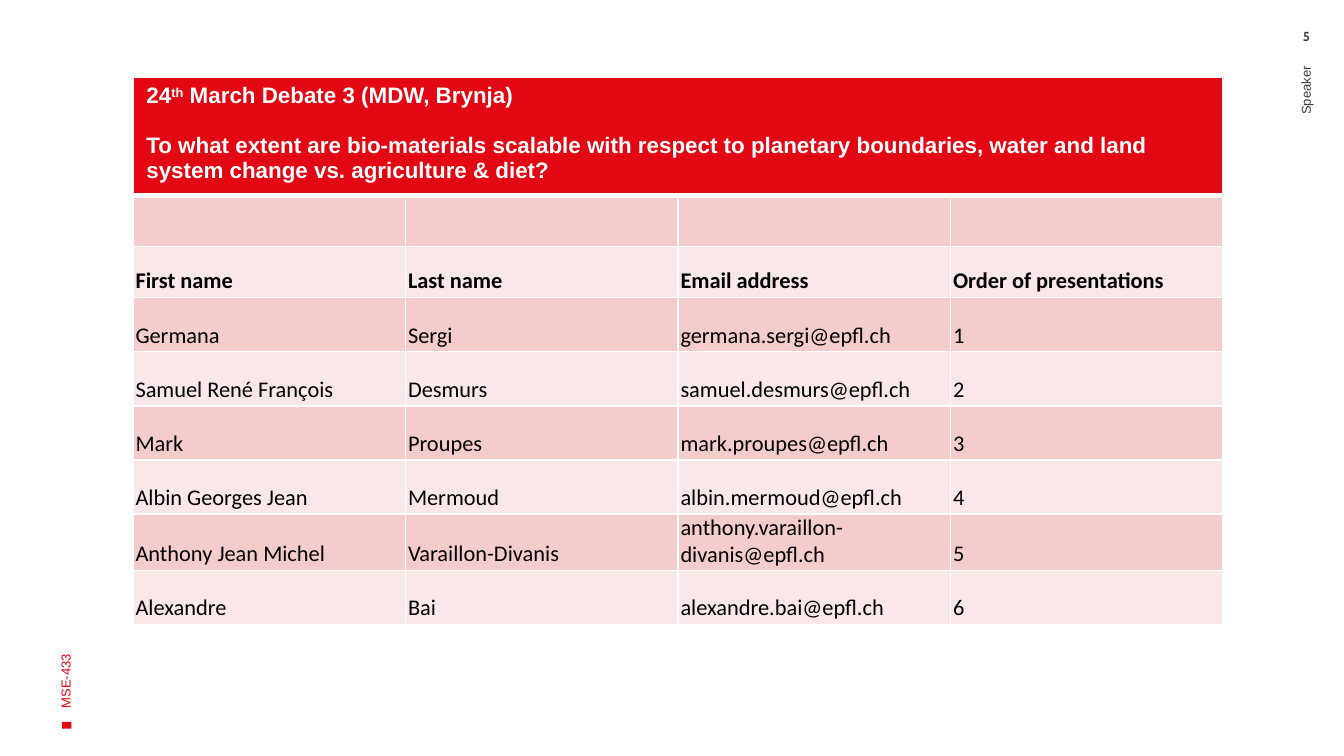
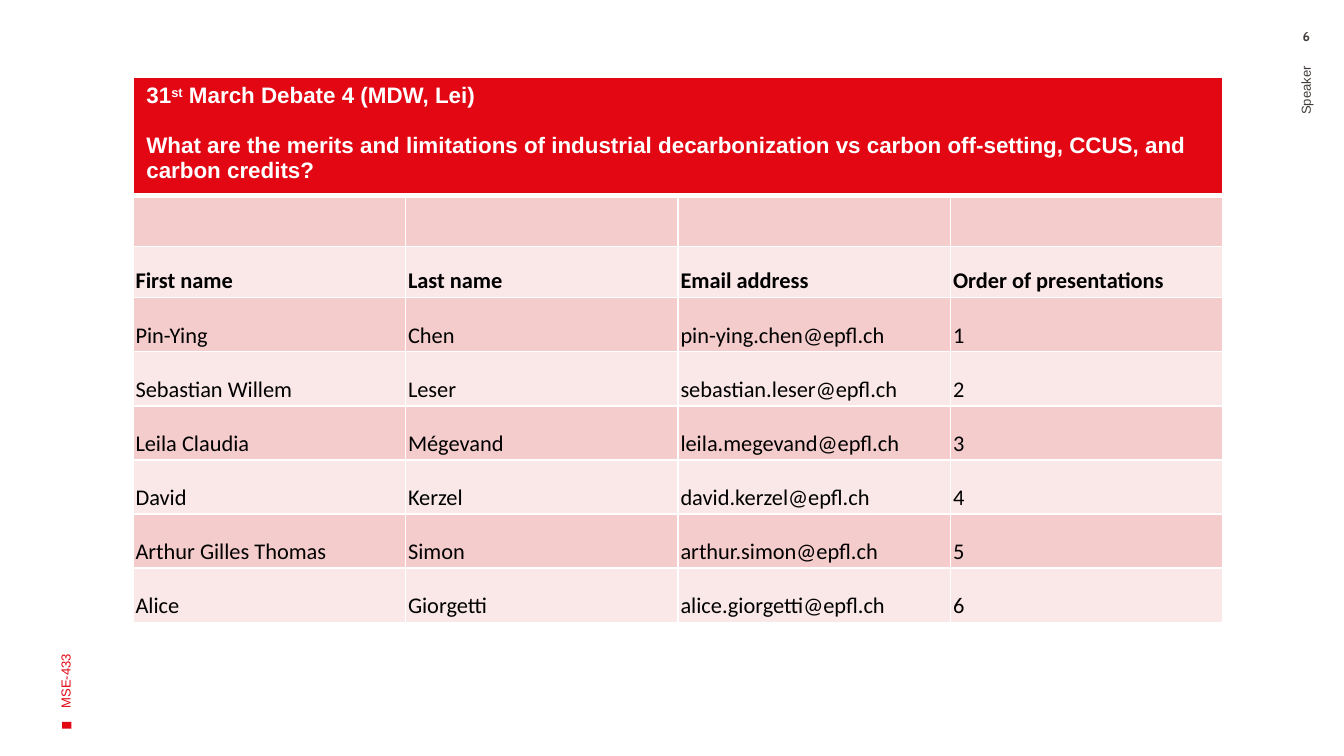
import pptx
import pptx.util
import pptx.dml.color
import pptx.enum.shapes
import pptx.enum.text
import pptx.oxml.ns
from lxml import etree

Pt = pptx.util.Pt
ALIGN = pptx.enum.text.PP_ALIGN
ANCHOR = pptx.enum.text.MSO_ANCHOR

# Content
COURSE = "MSE-433"
SPEAKER = "Speaker"
COLUMN_TITLES = ("First name", "Last name", "Email address", "Order of presentations")
DEBATES = [
    {
        "page": 5,
        "date": ("24", "th", " March Debate 3 (MDW, Brynja)"),
        "question": "To what extent are bio-materials scalable with respect to planetary "
                    "boundaries, water and land system change vs. agriculture & diet?",
        "speakers": [
            ("Germana", "Sergi", "germana.sergi@epfl.ch"),
            ("Samuel René François", "Desmurs", "samuel.desmurs@epfl.ch"),
            ("Mark", "Proupes", "mark.proupes@epfl.ch"),
            ("Albin Georges Jean", "Mermoud", "albin.mermoud@epfl.ch"),
            ("Anthony Jean Michel", "Varaillon-Divanis", "anthony.varaillon-divanis@epfl.ch"),
            ("Alexandre", "Bai", "alexandre.bai@epfl.ch"),
        ],
    },
    {
        "page": 6,
        "date": ("31", "st", " March Debate 4 (MDW, Lei)"),
        "question": "What are the merits and limitations of industrial decarbonization "
                    "vs carbon off-setting, CCUS, and carbon credits?",
        "speakers": [
            ("Pin-Ying", "Chen", "pin-ying.chen@epfl.ch"),
            ("Sebastian Willem", "Leser", "sebastian.leser@epfl.ch"),
            ("Leila Claudia", "Mégevand", "leila.megevand@epfl.ch"),
            ("David", "Kerzel", "david.kerzel@epfl.ch"),
            ("Arthur Gilles Thomas", "Simon", "arthur.simon@epfl.ch"),
            ("Alice", "Giorgetti", "alice.giorgetti@epfl.ch"),
        ],
    },
]

# Shared look
COLORS = {"red": "E30613", "dark": "413C3A", "black": "000000", "white": "FFFFFF",
          "odd": "F4CCCC", "even": "FAE7E7"}
TABLE_LEFT, TABLE_TOP, COLUMN_WIDTH = 71.2, 41.2, 146
TITLE_HEIGHT, HEADING_HEIGHT, SPEAKER_HEIGHT = 61.6, 27.4, 29


def color(name):
    return pptx.dml.color.RGBColor.from_string(COLORS[name])


def write_text(frame, paragraphs, size=12, font="Arial", ink="black", bold=False,
               align=ALIGN.LEFT, gap=0):
    """Each paragraph is a tuple of runs; every second run is superscript."""
    for index, runs in enumerate(paragraphs):
        para = frame.add_paragraph() if index else frame.paragraphs[0]
        para.alignment = align
        if index:
            para.space_before = Pt(gap)
        for position, words in enumerate(runs):
            span = para.add_run()
            span.text = words
            span.font.size, span.font.name, span.font.bold = Pt(size), font, bold
            span.font.color.rgb = color(ink)
            if position % 2:
                span.font._element.set("baseline", "30000")


def add_label(page, words, left, top, width, height, rotation=0, anchor=ANCHOR.MIDDLE,
              inset=3.6, **style):
    box = page.shapes.add_textbox(Pt(left), Pt(top), Pt(width), Pt(height))
    box.rotation = rotation
    frame = box.text_frame
    frame.word_wrap = True
    frame.vertical_anchor = anchor
    frame.margin_top = frame.margin_bottom = Pt(inset)
    write_text(frame, [(words,)], size=7, **style)


def add_frame(page, number):
    """Course mark, speaker label and page number."""
    mark = page.shapes.add_shape(pptx.enum.shapes.MSO_SHAPE.RECTANGLE,
                                 Pt(34), Pt(386), Pt(3.6), Pt(5))
    mark.rotation = 270
    mark.shadow.inherit = False
    mark.fill.solid()
    mark.fill.fore_color.rgb = color("red")
    mark.line.fill.background()
    add_label(page, COURSE, -96.5, 219, 263, 72, rotation=270, ink="red")
    add_label(page, SPEAKER, 560.2, 147.6, 278.6, 40.3, rotation=270, ink="dark",
              align=ALIGN.RIGHT)
    add_label(page, str(number), 679.7, 15.1, 40.3, 13, anchor=ANCHOR.TOP, inset=0,
              font="Cabin", ink="dark", bold=True, align=ALIGN.CENTER)


def style_cell(cell, fill, row):
    properties = cell._tc.get_or_add_tcPr()
    for side in "LRTB":
        below_title = (row, side) in ((0, "B"), (1, "T"))
        line = etree.SubElement(properties, pptx.oxml.ns.qn(f"a:ln{side}"),
                                w=str(int(Pt(3 if below_title else 1))))
        solid = etree.SubElement(line, pptx.oxml.ns.qn("a:solidFill"))
        etree.SubElement(solid, pptx.oxml.ns.qn("a:srgbClr"), val=COLORS["white"])
    cell.fill.solid()
    cell.fill.fore_color.rgb = color(fill)
    if row:
        cell.vertical_anchor = ANCHOR.BOTTOM
        cell.margin_left = cell.margin_right = cell.margin_bottom = Pt(1.4)
        cell.margin_top = 0


def add_debate_table(page, debate):
    speakers = [(*person, str(order))
                for order, person in enumerate(debate["speakers"], 1)]
    rows = [("",) * 4, ("",) * 4, COLUMN_TITLES, *speakers]
    heights = [TITLE_HEIGHT] + [HEADING_HEIGHT] * 2 + [SPEAKER_HEIGHT] * len(speakers)
    count = len(COLUMN_TITLES)
    table = page.shapes.add_table(len(rows), count, Pt(TABLE_LEFT), Pt(TABLE_TOP),
                                  Pt(COLUMN_WIDTH * count), Pt(sum(heights))).table
    table.first_row = table.horz_banding = False
    for column in table.columns:
        column.width = Pt(COLUMN_WIDTH)
    for row, values in enumerate(rows):
        table.rows[row].height = Pt(heights[row])
        fill = "red" if row == 0 else "odd" if row % 2 else "even"
        for column, value in enumerate(values):
            cell = table.cell(row, column)
            style_cell(cell, fill, row)
            if value:
                write_text(cell.text_frame, [(value,)], font="Calibri", bold=row == 2)
    title = table.cell(0, 0)
    title.merge(table.cell(0, count - 1))
    write_text(title.text_frame, [debate["date"], (debate["question"],)],
               ink="white", bold=True, gap=13)


def main():
    deck = pptx.Presentation()
    deck.slide_width, deck.slide_height = Pt(720), Pt(405)
    for debate in DEBATES:
        page = deck.slides.add_slide(deck.slide_layouts[6])
        add_frame(page, debate["page"])
        add_debate_table(page, debate)
    deck.save("out.pptx")


if __name__ == "__main__":
    main()
